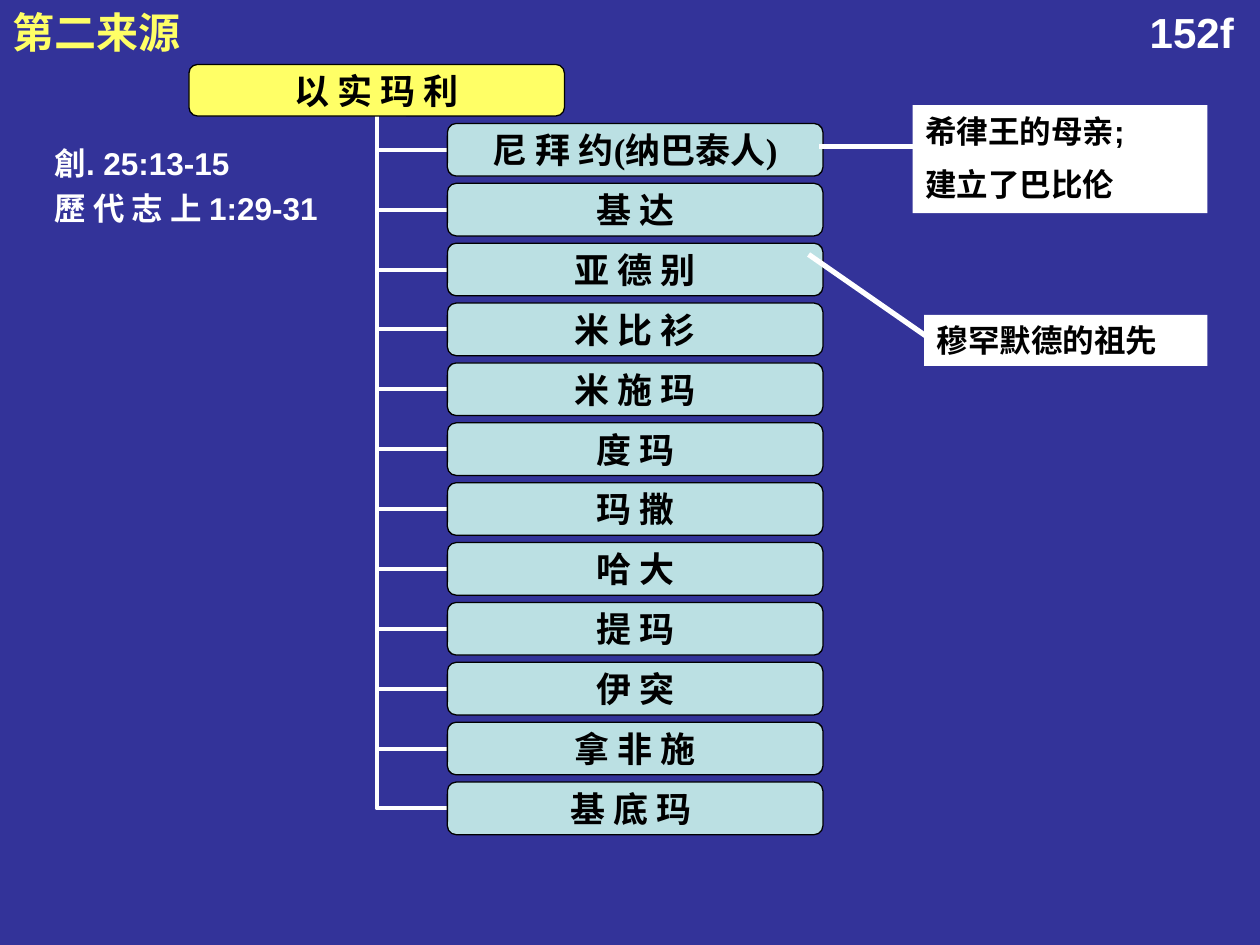
from lxml import etree
from pptx import Presentation
from pptx.dml.color import RGBColor
from pptx.enum import shapes, text
from pptx.oxml.ns import qn
from pptx.util import Cm, Pt

NAVY = RGBColor(0x33, 0x33, 0x99)
YELLOW = RGBColor(0xFF, 0xFF, 0x66)
PALE_BLUE = RGBColor(0xBB, 0xE0, 0xE3)
WHITE = RGBColor(0xFF, 0xFF, 0xFF)
BLACK = RGBColor(0, 0, 0)

SONS = ["尼 拜 约(纳巴泰人)", "基 达", "亚 德 别", "米 比 衫", "米 施 玛", "度 玛",
        "玛 撒", "哈 大", "提 玛", "伊 突", "拿 非 施", "基 底 玛 "]


def write(shape, lines, size, color, font="Arial", align=text.PP_ALIGN.LEFT,
          anchor=text.MSO_ANCHOR.TOP, inset=(0.25, 0.13), spacing=None):
    frame = shape.text_frame
    frame.word_wrap = True
    frame.auto_size = text.MSO_AUTO_SIZE.NONE
    frame.vertical_anchor = anchor
    frame.margin_left = frame.margin_right = Cm(inset[0])
    frame.margin_top = frame.margin_bottom = Cm(inset[1])
    for index, line in enumerate(lines):
        para = frame.add_paragraph() if index else frame.paragraphs[0]
        para.text = line
        para.alignment = align
        para.space_before = Pt(size / 2 if index else 0)
        if spacing:
            para.line_spacing = spacing
        para.font.name = font
        para.font.size = Pt(size)
        para.font.bold = True
        para.font.color.rgb = color


def add_line(page, kind, start, end, width):
    line = page.shapes.add_connector(kind, *start, *end)
    line.line.color.rgb = WHITE
    line.line.width = Pt(width)
    etree.SubElement(line._element.spPr, qn("a:effectLst"))
    return line


def add_branch(page, trunk, son):
    """Draw one elbow from the son's left side across and up to the trunk's top."""
    branch = add_line(page, shapes.MSO_CONNECTOR.ELBOW, trunk, son, 2.25)
    properties = branch._element.spPr
    properties.find(qn("a:prstGeom")).set("prst", "bentConnector2")
    properties.find(qn("a:xfrm")).set("rot", "10800000")


def add_name(page, name, left, top, width, height, fill):
    box = page.shapes.add_shape(shapes.MSO_SHAPE.ROUNDED_RECTANGLE, left, top, width, height)
    box.shadow.inherit = False
    box.fill.solid()
    box.fill.fore_color.rgb = fill
    box.line.color.rgb = BLACK
    box.line.width = Pt(0.75)
    write(box, [name], 20, BLACK, "Times New Roman", text.PP_ALIGN.CENTER,
          text.MSO_ANCHOR.MIDDLE, (0.06, 0.04))


def add_family_tree(page, left, top, father, sons):
    width, height, pitch = Cm(7.57), Cm(1.06), Cm(1.207)
    trunk = (left + width // 2, top + Cm(1.04))
    son_left, first_top = left + Cm(5.21), top + Cm(1.19)
    tops = [first_top + index * pitch for index in range(len(sons))]
    for son_top in reversed(tops):
        add_branch(page, trunk, (son_left, son_top + height // 2))
    add_name(page, father, left, top, width, Cm(1.04), YELLOW)
    for son, son_top in zip(sons, tops):
        add_name(page, son, son_left, son_top, width, height, PALE_BLUE)


def add_note(page, lines, left, top, width, height, start, end):
    """Place a white note and the line that leads to it."""
    add_line(page, shapes.MSO_CONNECTOR.STRAIGHT, start, end, 3)
    note = page.shapes.add_shape(shapes.MSO_SHAPE.RECTANGLE, left, top, width, height)
    note.shadow.inherit = False
    note.fill.solid()
    note.fill.fore_color.rgb = WHITE
    note.line.fill.background()
    write(note, lines, 18, BLACK)


def add_title(page, title, left, top, width, height):
    box = page.shapes.title
    box.left, box.top, box.width, box.height = left, top, width, height
    write(box, [title], 24, YELLOW)


def add_label(page, lines, left, top, width, height, size, **style):
    label = page.shapes.add_textbox(left, top, width, height)
    write(label, lines, size, WHITE, **style)


def main():
    deck = Presentation()
    deck.slide_width, deck.slide_height = Cm(25.4), Cm(19.05)
    page = deck.slides.add_slide(deck.slide_layouts[5])
    page.background.fill.solid()
    page.background.fill.fore_color.rgb = NAVY

    add_title(page, "第二来源", Cm(0), Cm(0), Cm(6.15), Cm(1.27))
    add_family_tree(page, Cm(3.81), Cm(1.3), "以 实 玛 利", SONS)
    add_note(page, ["希律王的母亲;", "建立了巴比伦"], Cm(18.4), Cm(2.12), Cm(5.94), Cm(2.18),
             (Cm(16.51), Cm(2.96)), (Cm(18.4), Cm(2.96)))
    add_note(page, ["穆罕默德的祖先"], Cm(18.63), Cm(6.35), Cm(5.71), Cm(1.03),
             (Cm(16.3), Cm(5.13)), (Cm(19.05), Cm(7.04)))
    add_label(page, ["創. 25:13-15", "歷 代 志 上 1:29-31"],
              Cm(0.85), Cm(2.96), Cm(6.77), Cm(1.83), 18, spacing=0.75)
    add_label(page, ["152f"], Cm(22.65), Cm(0), Cm(2.75), Cm(1.29), 24,
              align=text.PP_ALIGN.CENTER)
    deck.save("out.pptx")


if __name__ == "__main__":
    main()
